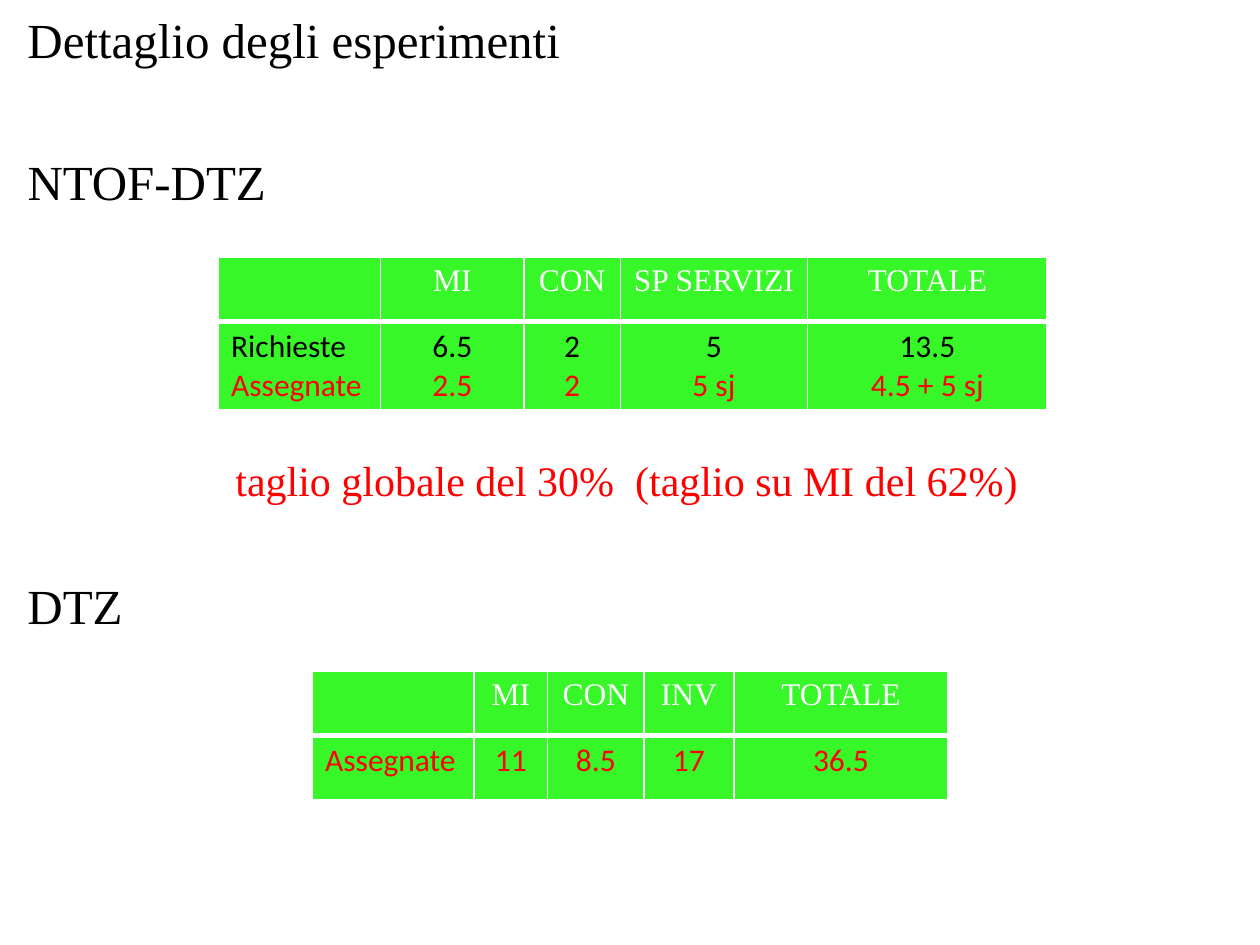
from dataclasses import dataclass

from lxml import etree
from pptx import Presentation
from pptx.dml.color import RGBColor
from pptx.enum.text import MSO_AUTO_SIZE, PP_ALIGN
from pptx.oxml.ns import qn
from pptx.util import Pt

LEFT, CENTER = PP_ALIGN.LEFT, PP_ALIGN.CENTER
FIT_SHAPE = MSO_AUTO_SIZE.SHAPE_TO_FIT_TEXT

BLACK = RGBColor(0x00, 0x00, 0x00)
WHITE = RGBColor(0xFF, 0xFF, 0xFF)
RED = RGBColor(0xFF, 0x00, 0x00)
GREEN = RGBColor(0x38, 0xF7, 0x29)

SERIF, SANS = "Times New Roman", "Calibri"
ROW_HEIGHT = 36.72


@dataclass(frozen=True)
class Label:
    text: str
    left: float
    top: float
    width: float
    height: float
    size: float = 28
    color: RGBColor = BLACK


@dataclass(frozen=True)
class Budget:
    left: float
    top: float
    widths: tuple[float, ...]
    body_height: float
    sites: tuple[str, ...]
    lines: tuple[tuple[RGBColor, tuple[str, ...]], ...]


LABELS = (
    Label("Dettaglio degli esperimenti", 8.64, 2.16, 329, 41),
    Label("taglio globale del 30%  (taglio su MI del 62%)",
          127.44, 256.3, 465.8, 36, size=24, color=RED),
    Label("NTOF-DTZ", 8.64, 82.8, 152.6, 41),
    Label("DTZ", 8.64, 325.4, 69.8, 41),
)

BUDGETS = (
    Budget(124.9, 146.9, (92.6, 82, 55, 107, 137), 50.4,
           ("", "MI", "CON", "SP SERVIZI", "TOTALE"),
           ((BLACK, ("Richieste", "6.5", "2", "5", "13.5")),
            (RED, ("Assegnate", "2.5", "2", "5 sj", "4.5 + 5 sj")))),
    Budget(178.6, 383.4, (92.2, 42.2, 55, 51.4, 122.4), ROW_HEIGHT,
           ("", "MI", "CON", "INV", "TOTALE"),
           ((RED, ("Assegnate", "11", "8.5", "17", "36.5")),)),
)


def write(paragraph, text: str, *, size: float = 18, font: str = SERIF,
          color: RGBColor = BLACK, align=LEFT) -> None:
    paragraph.alignment = align
    if not text:
        return
    run = paragraph.add_run()
    run.text = text
    run.font.size = Pt(size)
    run.font.name = font
    run.font.color.rgb = color


def add_label(slide, label: Label) -> None:
    box = slide.shapes.add_textbox(Pt(label.left), Pt(label.top),
                                   Pt(label.width), Pt(label.height))
    box.fill.solid()
    box.fill.fore_color.rgb = WHITE
    frame = box.text_frame
    frame.word_wrap = False
    frame.auto_size = FIT_SHAPE
    write(frame.paragraphs[0], label.text, size=label.size, color=label.color)


def style_cell(cell, bottom: float) -> None:
    # Borders come before the fill in the cell properties
    properties = cell._tc.get_or_add_tcPr()
    for side, width in (("L", 1), ("R", 1), ("T", 1), ("B", bottom)):
        line = etree.SubElement(properties, qn(f"a:ln{side}"), w=str(Pt(width)))
        solid = etree.SubElement(line, qn("a:solidFill"))
        etree.SubElement(solid, qn("a:srgbClr"), val=str(WHITE))
    cell.fill.solid()
    cell.fill.fore_color.rgb = GREEN


def add_budget(slide, budget: Budget) -> None:
    heights = (ROW_HEIGHT, budget.body_height)
    table = slide.shapes.add_table(
        len(heights), len(budget.widths), Pt(budget.left), Pt(budget.top),
        Pt(sum(budget.widths)), Pt(sum(heights))).table
    for row, height in zip(table.rows, heights):
        row.height = Pt(height)
    for index, width in enumerate(budget.widths):
        table.columns[index].width = Pt(width)
        align = CENTER if index else LEFT

        # Header
        header = table.cell(0, index)
        style_cell(header, bottom=3)
        write(header.text_frame.paragraphs[0], budget.sites[index],
              color=WHITE, align=align)

        # Requested and assigned amounts share one cell
        body = table.cell(1, index)
        style_cell(body, bottom=1)
        frame = body.text_frame
        for number, (color, values) in enumerate(budget.lines):
            paragraph = frame.add_paragraph() if number else frame.paragraphs[0]
            write(paragraph, values[index], font=SANS, color=color, align=align)


def main() -> None:
    deck = Presentation()
    deck.slide_width, deck.slide_height = Pt(720), Pt(540)
    slide = deck.slides.add_slide(deck.slide_layouts[6])
    for label in LABELS:
        add_label(slide, label)
    for budget in BUDGETS:
        add_budget(slide, budget)
    deck.save("out.pptx")


if __name__ == "__main__":
    main()
